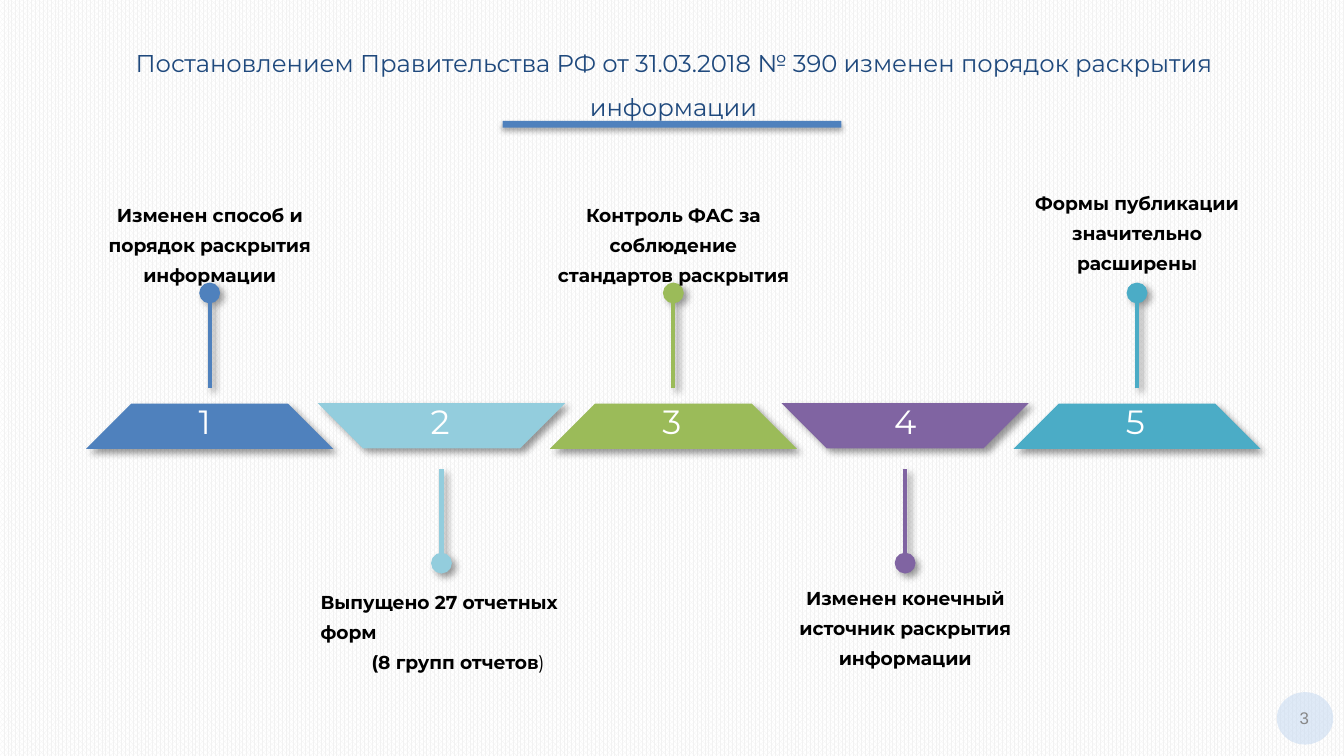
from lxml import etree
from pptx import Presentation
from pptx.dml.color import RGBColor
from pptx.enum.dml import MSO_PATTERN
from pptx.enum.shapes import MSO_CONNECTOR, MSO_SHAPE
from pptx.enum.text import MSO_ANCHOR, MSO_AUTO_SIZE, PP_ALIGN
from pptx.oxml.ns import qn
from pptx.util import Inches, Pt

WHITE = RGBColor(0xFF, 0xFF, 0xFF)
BLACK = RGBColor(0, 0, 0)
PALE_GREY = RGBColor(0xF2, 0xF2, 0xF2)
GREY = RGBColor(0x88, 0x88, 0x88)
NAVY = RGBColor(0x1F, 0x49, 0x7D)
BLUE = RGBColor(0x4F, 0x81, 0xBD)
SKY = RGBColor(0x93, 0xCD, 0xDD)
GREEN = RGBColor(0x9B, 0xBB, 0x59)
PURPLE = RGBColor(0x80, 0x64, 0xA2)
TEAL = RGBColor(0x4B, 0xAC, 0xC6)
PALE_BLUE = RGBColor(0xC6, 0xD9, 0xF1)

FONT = "Montserrat"
STEP_GAP = 1.725
LINE_HEIGHT = Pt(16.1)
STEP_SHADOW = (40, 4, 3, 45)  # opacity %, blur pt, distance pt, angle

# Colour, top of the label, label paragraphs
STEPS = [
    (BLUE, 1.41, ["Изменен способ и порядок раскрытия информации"]),
    (SKY, 4.29, ["Выпущено 27 отчетных форм", "(8 групп отчетов"]),
    (GREEN, 1.41, ["Контроль ФАС за соблюдение стандартов раскрытия"]),
    (PURPLE, 4.26, ["Изменен конечный источник раскрытия информации"]),
    (TEAL, 1.32, ["Формы публикации значительно расширены"]),
]


def add_shadow(s, opacity, blur, distance, angle):
    sp_pr = s._element.spPr
    for old in sp_pr.findall(qn("a:effectLst")):
        sp_pr.remove(old)
    effects = etree.SubElement(sp_pr, qn("a:effectLst"))
    shadow = etree.SubElement(effects, qn("a:outerShdw"), blurRad=str(Pt(blur)),
                              dist=str(Pt(distance)), dir=str(angle * 60000),
                              algn="tl", rotWithShape="0")
    color = etree.SubElement(shadow, qn("a:srgbClr"), val="000000")
    etree.SubElement(color, qn("a:alpha"), val=str(opacity * 1000))


def add_filled(slide, kind, box, color):
    s = slide.shapes.add_shape(kind, *map(Inches, box))
    s.shadow.inherit = False
    s.fill.solid()
    s.fill.fore_color.rgb = color
    s.line.fill.background()
    return s


def add_text(slide, box, paragraphs, size, color, *, font=FONT, bold=False,
             align=PP_ALIGN.CENTER, spacing=None, insets=(0.09, 0.05),
             wrap=True, fit=MSO_AUTO_SIZE.SHAPE_TO_FIT_TEXT):
    tf = slide.shapes.add_textbox(*map(Inches, box)).text_frame
    tf.word_wrap = wrap
    tf.auto_size = fit
    tf.margin_left = tf.margin_right = Inches(insets[0])
    tf.margin_top = tf.margin_bottom = Inches(insets[1])
    for i, text in enumerate(paragraphs):
        p = tf.add_paragraph() if i else tf.paragraphs[0]
        p.add_run().text = text
        p.alignment = align
        p.line_spacing = spacing
        p.font.name, p.font.size, p.font.bold = font, Pt(size), bold
        p.font.color.rgb = color
    return tf


def add_pin(slide, x, start, end, color):
    """Draw a vertical line with a large round head at its end."""
    line = slide.shapes.add_connector(MSO_CONNECTOR.STRAIGHT, Inches(x), Inches(start),
                                      Inches(x), Inches(end))
    line.line.color.rgb = color
    line.line.width = Pt(2.25)
    etree.SubElement(line.line._get_or_add_ln(), qn("a:tailEnd"),
                     type="oval", w="lg", len="lg")
    add_shadow(line, *STEP_SHADOW)


def add_label(slide, x, top, paragraphs, is_list):
    tf = add_text(slide, (x, top, 1.98, 0.76), paragraphs, 10, BLACK, bold=True,
                  align=PP_ALIGN.LEFT if is_list else PP_ALIGN.CENTER,
                  spacing=LINE_HEIGHT)
    tf.paragraphs[0].space_before = Pt(2)
    if is_list:
        p = tf.paragraphs[-1]
        p._p.get_or_add_pPr().set("marL", str(Inches(0.38)))
        r = p.add_run()
        r.text = ")"
        r.font.bold = False


def add_step(slide, index, color, label_top, paragraphs):
    shift = index * STEP_GAP
    is_up = index % 2 == 0
    stripe = add_filled(slide, MSO_SHAPE.DIAGONAL_STRIPE,
                        (0.91 + shift, 2.69 if is_up else 2.35, 1.3, 1.3), color)
    stripe.adjustments[0] = 0.634
    stripe.rotation = 45 if is_up else 225
    add_shadow(stripe, *STEP_SHADOW)
    start, end = (2.89, 2.18) if is_up else (3.49, 4.19)
    add_pin(slide, 1.56 + shift, start, end, color)
    add_label(slide, 0.57 + shift, label_top, paragraphs, len(paragraphs) > 1)
    add_text(slide, (1.38 + shift, 3.01, 0.34, 0.33), [str(index + 1)], 18, WHITE,
             align=PP_ALIGN.LEFT, spacing=LINE_HEIGHT, insets=(0.1, 0.05), wrap=False)


def add_title(slide):
    add_text(slide, (0.6, 0.23, 8.82, 0.37),
             ["Постановлением Правительства РФ от 31.03.2018 № 390 "
              "изменен порядок раскрытия информации"],
             13, NAVY, spacing=1.5, insets=(0.04, 0.02))
    bar = add_filled(slide, MSO_SHAPE.RECTANGLE, (3.74, 0.9, 2.52, 0.05), BLUE)
    add_shadow(bar, 35, 3.1, 1.8, 90)


def add_page_number(slide):
    disc = add_filled(slide, MSO_SHAPE.OVAL, (9.5, 5.15, 0.42, 0.39), PALE_BLUE)
    color = disc._element.spPr.find(qn("a:solidFill"))[0]
    etree.SubElement(color, qn("a:alpha"), val="55000")
    tf = add_text(slide, (9.53, 5.17, 0.35, 0.34), ["3"], 9, GREY, font="Arial",
                  insets=(0.1, 0.1), fit=MSO_AUTO_SIZE.NONE)
    tf.vertical_anchor = MSO_ANCHOR.MIDDLE


def main():
    prs = Presentation()
    prs.slide_width = Inches(10)
    prs.slide_height = Inches(10 * 9 / 16)
    slide = prs.slides.add_slide(prs.slide_layouts[6])
    fill = slide.background.fill
    fill.patterned()
    fill.pattern = MSO_PATTERN.PERCENT_80
    fill.fore_color.rgb = PALE_GREY
    fill.back_color.rgb = WHITE
    add_title(slide)
    for index, (color, label_top, paragraphs) in enumerate(STEPS):
        add_step(slide, index, color, label_top, paragraphs)
    add_page_number(slide)
    prs.save("out.pptx")


if __name__ == "__main__":
    main()
